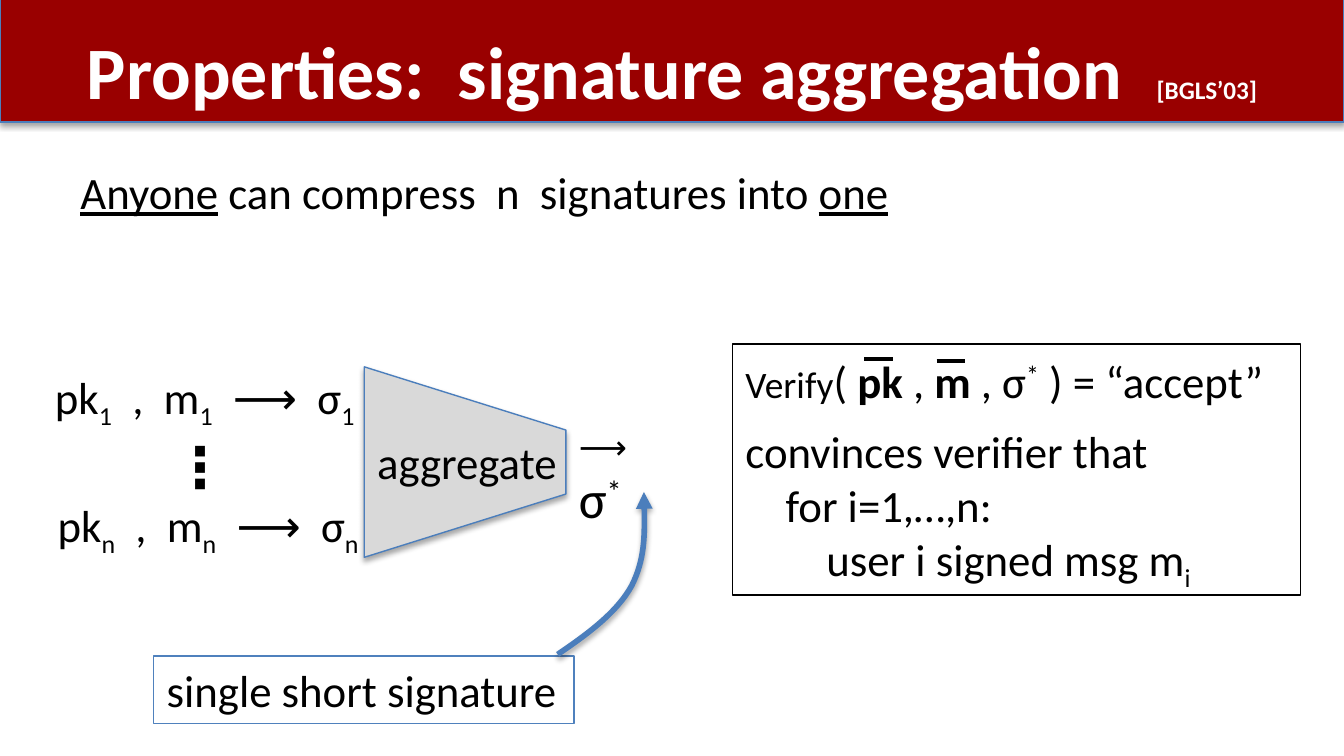
from typing import NamedTuple

from lxml.etree import SubElement
from pptx import Presentation
from pptx.dml.color import RGBColor
from pptx.enum.shapes import MSO_CONNECTOR as Link, MSO_SHAPE as Kind
from pptx.enum.text import MSO_ANCHOR as Anchor, PP_ALIGN as Align
from pptx.oxml.ns import qn
from pptx.util import Cm, Pt

BLACK, WHITE, RED, GREY = "000000", "FFFFFF", "990000", "D9D9D9"
BLUE, PALE = "4B7EBC", "4F81BD"
SUB, SUPER = -25, 30


class Box(NamedTuple):
    left: float
    top: float
    width: float
    height: float

    def cm(self) -> list:
        return [Cm(side) for side in self]


class Bit(NamedTuple):
    text: str
    size: float = 24
    bold: bool = False
    under: bool = False
    base: int = 0
    font: str = "Calibri"
    color: str = BLACK


class Line(NamedTuple):
    bits: list
    indent: float = 0
    before: float = 0


def rgb(code: str) -> RGBColor:
    return RGBColor.from_string(code)


def write(para, bits: list) -> None:
    for bit in bits:
        run = para.add_run()
        run.text = bit.text
        font = run.font
        font.name, font.size, font.bold = bit.font, Pt(bit.size), bit.bold
        font.underline = bit.under
        font.color.rgb = rgb(bit.color)
        if bit.base:
            font._element.set("baseline", str(bit.base * 1000))


def add_text(slide, box: Box, lines: list, edge: str = "",
             top: float = 0.13, anchor=Anchor.TOP):
    shape = slide.shapes.add_textbox(*box.cm())
    frame = shape.text_frame
    frame.word_wrap = True
    frame.margin_top = Cm(top)
    frame.vertical_anchor = anchor
    for i, line in enumerate(lines):
        para = frame.add_paragraph() if i else frame.paragraphs[0]
        para.space_before = Pt(line.before)
        if line.indent:
            para._p.get_or_add_pPr().set("marL", str(Cm(line.indent)))
        write(para, line.bits)
    if edge:
        shape.line.color.rgb = rgb(edge)
        shape.line.width = Pt(0.75)
    return shape


def add_shade(shape) -> None:
    shape.shadow.inherit = False
    effects = shape._element.spPr.find(qn("a:effectLst"))
    shade = SubElement(effects, qn("a:outerShdw"), blurRad=str(Pt(3.1)),
                       dist=str(Pt(1.8)), dir="5400000", rotWithShape="0")
    color = SubElement(shade, qn("a:srgbClr"), val=BLACK)
    SubElement(color, qn("a:alpha"), val="35000")


def add_block(slide, kind, box: Box, fill: str):
    shape = slide.shapes.add_shape(kind, *box.cm())
    shape.fill.solid()
    shape.fill.fore_color.rgb = rgb(fill)
    shape.line.color.rgb = rgb(BLUE)
    shape.line.width = Pt(0.75)
    add_shade(shape)
    return shape


def add_rule(slide, left: float, top: float, width: float) -> None:
    rule = slide.shapes.add_connector(
        Link.STRAIGHT, Cm(left), Cm(top), Cm(left + width), Cm(top))
    rule.line.color.rgb = rgb(BLACK)
    rule.line.width = Pt(2)
    SubElement(rule._element.spPr, qn("a:effectLst"))


def add_curve(slide, points: list) -> None:
    """Draw a Bezier arrow: a start, then three points per segment."""
    spots = [(Cm(x), Cm(y)) for x, y in points]
    pen = slide.shapes.build_freeform(*spots[0])
    pen.add_line_segments(spots[1:], close=False)
    curve = pen.convert_to_shape()
    track = next(curve._element.iter(qn("a:path")))
    steps = track.findall(qn("a:lnTo"))
    for i in range(0, len(steps), 3):
        bend = SubElement(track, qn("a:cubicBezTo"))
        for step in steps[i:i + 3]:
            bend.append(step[0])
            track.remove(step)
    curve.fill.background()
    curve.line.color.rgb = rgb(BLUE)
    curve.line.width = Pt(3)
    SubElement(curve.line._get_or_add_ln(), qn("a:tailEnd"), type="triangle")
    add_shade(curve)


def add_row(slide, left: float, top: float, index: str) -> None:
    bits = []
    for word in ("pk", "  ,  m", "  ⟶  σ"):
        bits += [Bit(word), Bit(index, base=SUB)]
    add_text(slide, Box(left, top, 7.28, 1.27), [Line(bits)])


def main() -> None:
    deck = Presentation()
    deck.slide_width, deck.slide_height = Cm(25.4), Cm(14.29)
    slide = deck.slides.add_slide(deck.slide_layouts[5])

    # Title over its bar
    bar = add_block(slide, Kind.RECTANGLE, Box(0, -0.03, 25.4, 2.34), RED)
    title = slide.shapes.title
    bar._element.addnext(title._element)
    title.left, title.top, title.width, title.height = Box(
        1.27, 0.36, 22.86, 1.73).cm()
    frame = title.text_frame
    frame.word_wrap = False
    frame.vertical_anchor = Anchor.TOP
    head = frame.paragraphs[0]
    head.alignment = Align.CENTER
    write(head, [
        Bit("Properties:  signature aggregation  ", 39.6, True, color=WHITE),
        Bit("[BGLS’03]", 13.5, True, color=WHITE)])

    # Claim
    add_text(slide, Box(1.27, 2.77, 18.26, 1.7), [Line([
        Bit("Anyone", under=True),
        Bit(" can compress  n  signatures into "),
        Bit("one", under=True)])], anchor=Anchor.MIDDLE)

    # Signatures that go in
    add_row(slide, 0.79, 6.86, "1")
    add_row(slide, 0.84, 9.27, "n")
    add_text(slide, Box(3.02, 8.03, 0.94, 1.55),
             [Line([Bit("⋮", 30, True, font="Arial")])])

    # Funnel and its result
    funnel = add_block(slide, Kind.TRAPEZOID, Box(6.99, 6.83, 3.6, 3.81), GREY)
    funnel.adjustments[0] = 0.332
    funnel.rotation = 90
    add_text(slide, Box(6.88, 8.08, 4.1, 1.27), [Line([Bit("aggregate")])])
    add_text(slide, Box(10.69, 7.92, 2.1, 1.45), [Line([
        Bit("⟶ ", 18, font="Arial"), Bit("σ", 28), Bit("*", 28, base=SUPER)])])

    # Verification
    add_text(slide, Box(13.84, 6.5, 10.74, 4.75), [
        Line([Bit("Verify", 20), Bit("( "), Bit("pk", bold=True), Bit(" , "),
              Bit("m", bold=True), Bit(" , σ"), Bit("*", base=SUPER),
              Bit(" ) = “accept”")]),
        Line([Bit("convinces verifier that")], before=9),
        Line([Bit("for i=1,…,n:")], indent=0.76),
        Line([Bit("user i signed msg m"), Bit("i", base=SUB)], indent=1.53),
    ], edge=BLACK, top=0.18)
    add_rule(slide, 16.33, 6.78, 0.54)
    add_rule(slide, 17.7, 6.83, 0.54)

    # Label with its arrow
    add_text(slide, Box(2.9, 12.4, 7.95, 1.27),
             [Line([Bit("single short signature")])], edge=PALE)
    add_curve(slide, [(10.54, 12.37), (11.1, 11.99), (11.66, 11.58),
                      (11.94, 11.07), (12.19, 10.57), (12.19, 9.93),
                      (12.17, 9.3)])

    deck.save("out.pptx")


if __name__ == "__main__":
    main()
